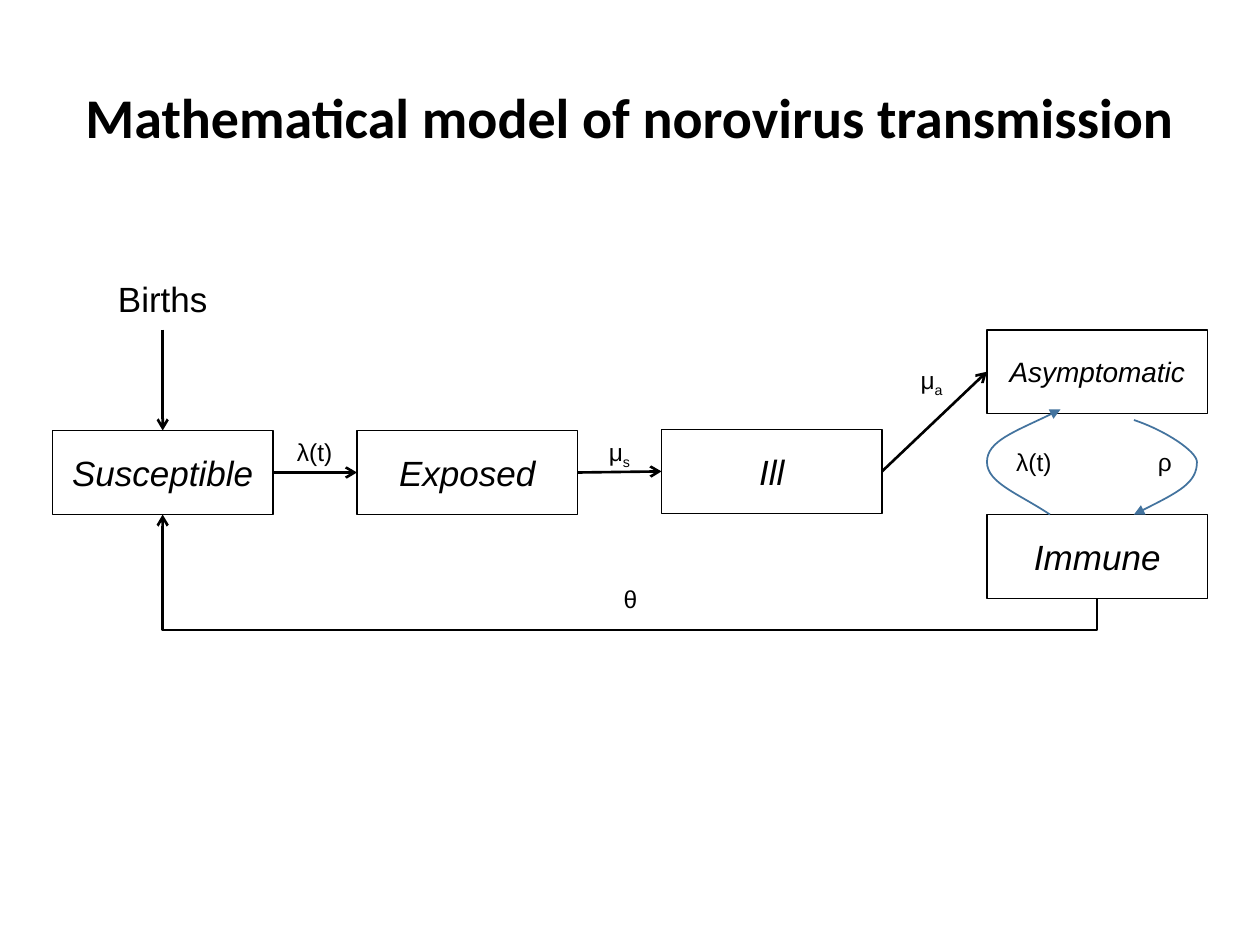
from dataclasses import dataclass

from lxml.etree import SubElement
from pptx import Presentation
from pptx.dml.color import RGBColor
from pptx.enum.shapes import MSO_CONNECTOR, MSO_SHAPE
from pptx.enum.text import MSO_ANCHOR, MSO_AUTO_SIZE, PP_ALIGN
from pptx.oxml.ns import qn
from pptx.util import Inches, Pt

TOP, LEFT, BOTTOM, RIGHT = range(4)


@dataclass(frozen=True)
class Theme:
    """Colours, fonts, type sizes and line widths of the slide."""
    ink: RGBColor = RGBColor(0, 0, 0)
    paper: RGBColor = RGBColor(255, 255, 255)
    curve: RGBColor = RGBColor(0x43, 0x73, 0x9E)
    title_font: str = "Calibri"
    body_font: str = "Arial"
    title_size: int = 32
    state_size: int = 20
    small_state_size: int = 16
    rate_size: int = 14
    thin: float = 1
    thick: float = 1.5


class DiagramSlide:
    """Draws a flow diagram on a grid of 120 columns and 90 rows."""

    def __init__(self, presentation, theme):
        """Add a title-only slide."""
        self.theme = theme
        self.column = presentation.slide_width / 120
        self.row = presentation.slide_height / 90
        self.slide = presentation.slides.add_slide(presentation.slide_layouts[5])

    def place(self, left, top, width, height):
        """Turn grid units into slide lengths."""
        return [round(units * step) for units, step in zip(
            (left, top, width, height), (self.column, self.row) * 2)]

    def label(self, shape, text, size, subscript="", align=PP_ALIGN.CENTER, **formats):
        """Fill one formatted paragraph with an optional subscript."""
        paragraph = shape.text_frame.paragraphs[0]
        paragraph.alignment = align
        values = {"name": self.theme.body_font, "size": Pt(size), **formats}
        for part, baseline in ((text, None), (subscript, "-25000")):
            if part:
                run = paragraph.add_run()
                run.text = part
                run.font.color.rgb = self.theme.ink
                for name, value in values.items():
                    setattr(run.font, name, value)
                if baseline:
                    run._r.get_or_add_rPr().set("baseline", baseline)
        return paragraph

    def stroke(self, shape, color, width, **ends):
        """Style an outline and its arrowheads."""
        shape.line.color.rgb = color
        shape.line.width = Pt(width)
        for end, kind in ends.items():
            SubElement(shape.line._ln, qn(f"a:{end}"), type=kind)

    def title(self, text, *area):
        """Fill and move the title placeholder."""
        shape = self.slide.shapes.title
        shape.left, shape.top, shape.width, shape.height = self.place(*area)
        shape.text_frame.vertical_anchor = MSO_ANCHOR.MIDDLE
        paragraph = self.label(shape, text, self.theme.title_size,
                               name=self.theme.title_font, bold=True)
        paragraph.line_spacing = 0.9

    def state(self, text, left, top, size):
        """Add an outlined box for one state."""
        shape = self.slide.shapes.add_shape(
            MSO_SHAPE.RECTANGLE, *self.place(left, top, 21, 8))
        shape.shadow.inherit = False
        shape.fill.solid()
        shape.fill.fore_color.rgb = self.theme.paper
        self.stroke(shape, self.theme.ink, self.theme.thin)
        shape.text_frame.vertical_anchor = MSO_ANCHOR.MIDDLE
        self.label(shape, text, size, italic=True)
        return shape

    def source(self, text, *area):
        """Add a centred caption where a flow starts."""
        shape = self.slide.shapes.add_textbox(*self.place(*area))
        shape.text_frame.word_wrap = True
        shape.text_frame.vertical_anchor = MSO_ANCHOR.MIDDLE
        self.label(shape, text, self.theme.state_size)
        return shape

    def rate(self, text, left, top, width, subscript=""):
        """Add a rate symbol beside an arrow."""
        shape = self.slide.shapes.add_textbox(*self.place(left, top, width, 4.1))
        shape.text_frame.word_wrap = False
        shape.text_frame.auto_size = MSO_AUTO_SIZE.SHAPE_TO_FIT_TEXT
        self.label(shape, text, self.theme.rate_size, subscript, PP_ALIGN.LEFT)

    def arrow(self, start, start_site, end, end_site, kind=MSO_CONNECTOR.STRAIGHT):
        """Join two shapes with an arrow."""
        connector = self.slide.shapes.add_connector(kind, 0, 0, 0, 0)
        connector.begin_connect(start, start_site)
        connector.end_connect(end, end_site)
        self.stroke(connector, self.theme.ink, self.theme.thick, tailEnd="arrow")
        SubElement(connector._element.spPr, qn("a:effectLst"))
        return connector

    def return_arrow(self, start, end, drop):
        """Join two bottom edges by a path that drops below the first."""
        connector = self.arrow(start, BOTTOM, end, BOTTOM, MSO_CONNECTOR.ELBOW)
        span, rise = connector.width, connector.height
        middle_x, middle_y = connector.left + span / 2, connector.top + rise / 2
        connector.left, connector.top = round(middle_x - rise / 2), round(middle_y - span / 2)
        connector.width, connector.height = rise, span
        properties = connector._element.spPr
        transform = properties.find(qn("a:xfrm"))
        transform.attrib.clear()
        for name, value in {"rot": "5400000", "flipH": "1"}.items():
            transform.set(name, value)
        share = round(-100000 * drop * self.row / rise)
        adjustments = properties.find(qn("a:prstGeom")).get_or_add_avLst()
        SubElement(adjustments, qn("a:gd"), name="adj1", fmla=f"val {share}")

    def curve(self, points, **ends):
        """Draw Bezier segments, three points each after the first."""
        builder = self.slide.shapes.build_freeform(
            *points[0], scale=(self.column, self.row))
        builder.add_line_segments(points[1:], close=False)
        shape = builder.convert_to_shape()
        outline = next(shape._element.iter(qn("a:path")))
        lines = outline.findall(qn("a:lnTo"))
        for first in range(0, len(lines), 3):
            segment = SubElement(outline, qn("a:cubicBezTo"))
            for line in lines[first:first + 3]:
                segment.append(line[0])
                outline.remove(line)
        shape.shadow.inherit = False
        shape.fill.background()
        self.stroke(shape, self.theme.curve, self.theme.thin, **ends)


def main():
    """Build the norovirus transmission slide."""
    presentation = Presentation()
    presentation.slide_width, presentation.slide_height = Inches(10), Inches(7.5)
    theme = Theme()
    diagram = DiagramSlide(presentation, theme)
    diagram.title("Mathematical model of norovirus transmission", 6, 4, 108, 15)

    susceptible = diagram.state("Susceptible", 5, 41, theme.state_size)
    exposed = diagram.state("Exposed", 34, 41, theme.state_size)
    ill = diagram.state("Ill", 63, 40.9, theme.state_size)
    asymptomatic = diagram.state("Asymptomatic", 94, 31.4, theme.small_state_size)
    immune = diagram.state("Immune", 94, 49, theme.state_size)
    births = diagram.source("Births", 9.2, 25.4, 12.6, 6)

    diagram.arrow(births, BOTTOM, susceptible, TOP)
    for start, end in ((susceptible, exposed), (exposed, ill), (ill, asymptomatic)):
        diagram.arrow(start, RIGHT, end, LEFT)
    diagram.return_arrow(immune, susceptible, 3)

    diagram.curve([(100.7, 39.2), (97.4, 40.8), (94.1, 42.4), (94, 44),
                   (93.8, 45.6), (96.8, 47.2), (100, 48.8)], headEnd="triangle")
    diagram.curve([(107.8, 39.5), (111, 41), (114.2, 42.6), (114.4, 44.3),
                   (114.5, 45.8), (111.5, 47.4), (108.5, 49.1)], tailEnd="triangle")

    for symbol in (("λ(t)", 27.1, 41, 5.8), ("μ", 56.8, 41, 4.6, "s"),
                   ("μ", 86.5, 34.2, 4.8, "a"), ("λ(t)", 95.6, 42, 5.8),
                   ("ρ", 109.1, 42, 3.8), ("θ", 58.2, 55, 3.7)):
        diagram.rate(*symbol)
    presentation.save("out.pptx")


if __name__ == "__main__":
    main()
